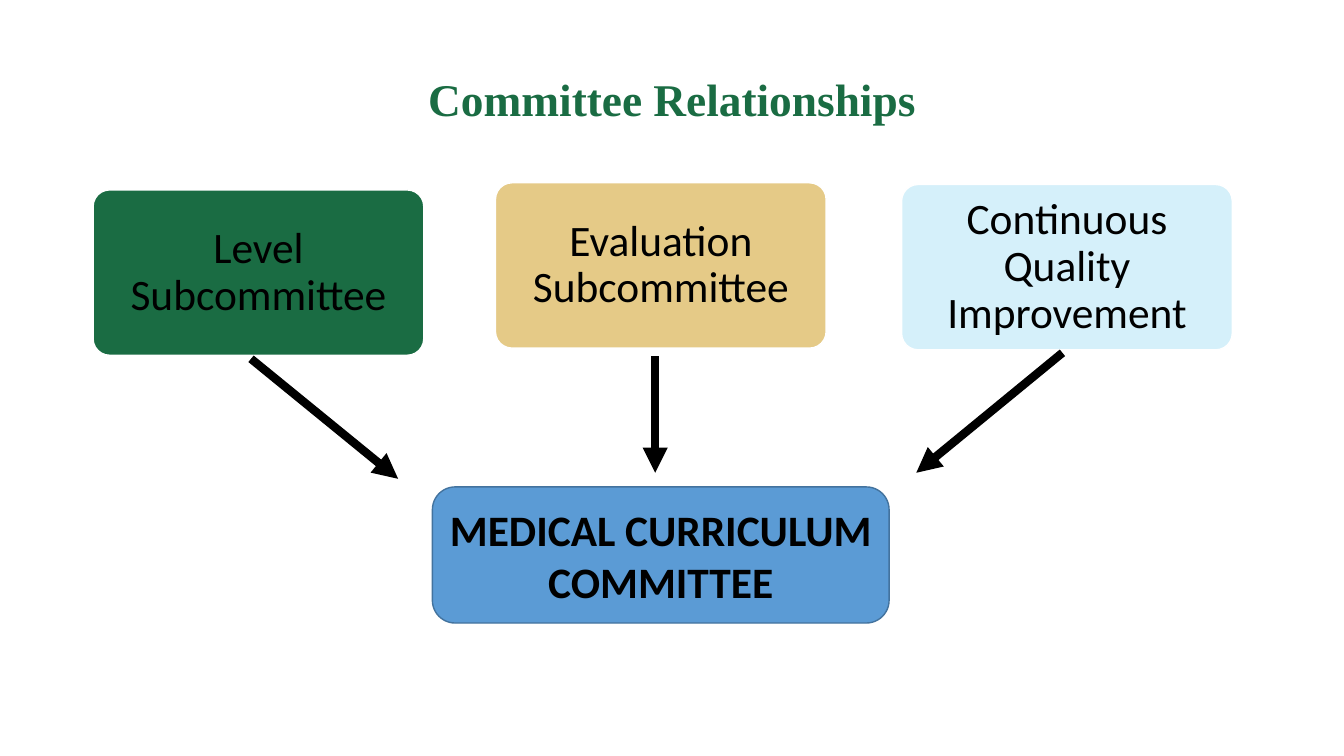
from dataclasses import dataclass

from lxml import etree
from pptx import Presentation
from pptx.dml.color import RGBColor
from pptx.enum.shapes import MSO_CONNECTOR, MSO_SHAPE
from pptx.enum.text import MSO_ANCHOR, PP_ALIGN
from pptx.oxml.ns import qn
from pptx.util import Pt

ROUNDED = MSO_SHAPE.ROUNDED_RECTANGLE
STRAIGHT = MSO_CONNECTOR.STRAIGHT
MIDDLE = MSO_ANCHOR.MIDDLE
CENTER = PP_ALIGN.CENTER
TITLE_ONLY_LAYOUT = 5


@dataclass(frozen=True)
class Theme:
    green: str = "1A6C43"
    gold: str = "CD9710"
    sky: str = "ADE2F7"
    blue: str = "5B9BD5"
    blue_edge: str = "43739E"
    black: str = "000000"
    white: str = "FFFFFF"
    title_font: str = "Times New Roman"
    body_font: str = "Calibri"
    title_size: float = 32.4
    box_size: float = 31


THEME = Theme()
CARD_WIDTH, CARD_HEIGHT = 236.2, 118.1

# label, left, top, fill, opacity in percent
SUBCOMMITTEES = [
    ("Level Subcommittee", 66.5, 135.7, THEME.green, 100),
    ("Evaluation Subcommittee", 353.9, 130.6, THEME.gold, 50),
    ("Continuous Quality Improvement", 644, 131.8, THEME.sky, 50),
]
# start x, start y, end x, end y
ARROWS = [
    (179.3, 256.3, 284.4, 342),
    (468, 254.5, 468, 337.7),
    (758.9, 252, 654.5, 337.7),
]


def write_text(shape, text, font_name, size, color, bold=False, spacing=1.0):
    frame = shape.text_frame
    frame.word_wrap = True
    frame.vertical_anchor = MIDDLE
    frame.text = text
    paragraph = frame.paragraphs[0]
    paragraph.alignment = CENTER
    paragraph.line_spacing = spacing
    font = paragraph.font
    font.name = font_name
    font.size = Pt(size)
    font.bold = bold
    font.color.rgb = RGBColor.from_string(color)


def add_title(page, text):
    title = page.shapes.title
    title.left, title.top = Pt(66), Pt(50.4)
    title.width, title.height = Pt(828), Pt(44)
    write_text(title, text, THEME.title_font, THEME.title_size, THEME.green, True, 0.9)


def add_box(page, left, top, width, height, fill, edge, opacity=100):
    box = page.shapes.add_shape(ROUNDED, Pt(left), Pt(top), Pt(width), Pt(height))
    box.shadow.inherit = False
    box.fill.solid()
    box.fill.fore_color.rgb = RGBColor.from_string(fill)
    box.line.color.rgb = RGBColor.from_string(edge)
    box.line.width = Pt(1)
    if opacity < 100:
        color = box.element.spPr.find(qn("a:solidFill")).find(qn("a:srgbClr"))
        etree.SubElement(color, qn("a:alpha"), val=str(opacity * 1000))
    return box


def add_subcommittee(page, label, left, top, fill, opacity):
    card = add_box(page, left, top, CARD_WIDTH, CARD_HEIGHT, fill, THEME.white, opacity)
    card.adjustments[0] = 0.1
    frame = card.text_frame
    frame.margin_left = frame.margin_right = Pt(7.6)
    frame.margin_top = frame.margin_bottom = Pt(6)
    write_text(card, label, THEME.body_font, THEME.box_size, THEME.black, spacing=0.9)


def add_committee(page, label):
    box = add_box(page, 308.9, 347.8, 326.2, 97.2, THEME.blue, THEME.blue_edge)
    write_text(box, label, THEME.body_font, THEME.box_size, THEME.black, bold=True)


def add_arrow(page, *ends):
    arrow = page.shapes.add_connector(STRAIGHT, *map(Pt, ends))
    arrow.line.color.rgb = RGBColor.from_string(THEME.black)
    arrow.line.width = Pt(6)
    properties = arrow.element.spPr
    etree.SubElement(properties.find(qn("a:ln")), qn("a:tailEnd"), type="triangle")
    etree.SubElement(properties, qn("a:effectLst"))


def main():
    deck = Presentation()
    deck.slide_width, deck.slide_height = Pt(960), Pt(540)
    page = deck.slides.add_slide(deck.slide_layouts[TITLE_ONLY_LAYOUT])
    add_title(page, "Committee Relationships")
    for subcommittee in SUBCOMMITTEES:
        add_subcommittee(page, *subcommittee)
    add_committee(page, "MEDICAL CURRICULUM COMMITTEE")
    for ends in ARROWS:
        add_arrow(page, *ends)
    deck.save("out.pptx")


if __name__ == "__main__":
    main()
